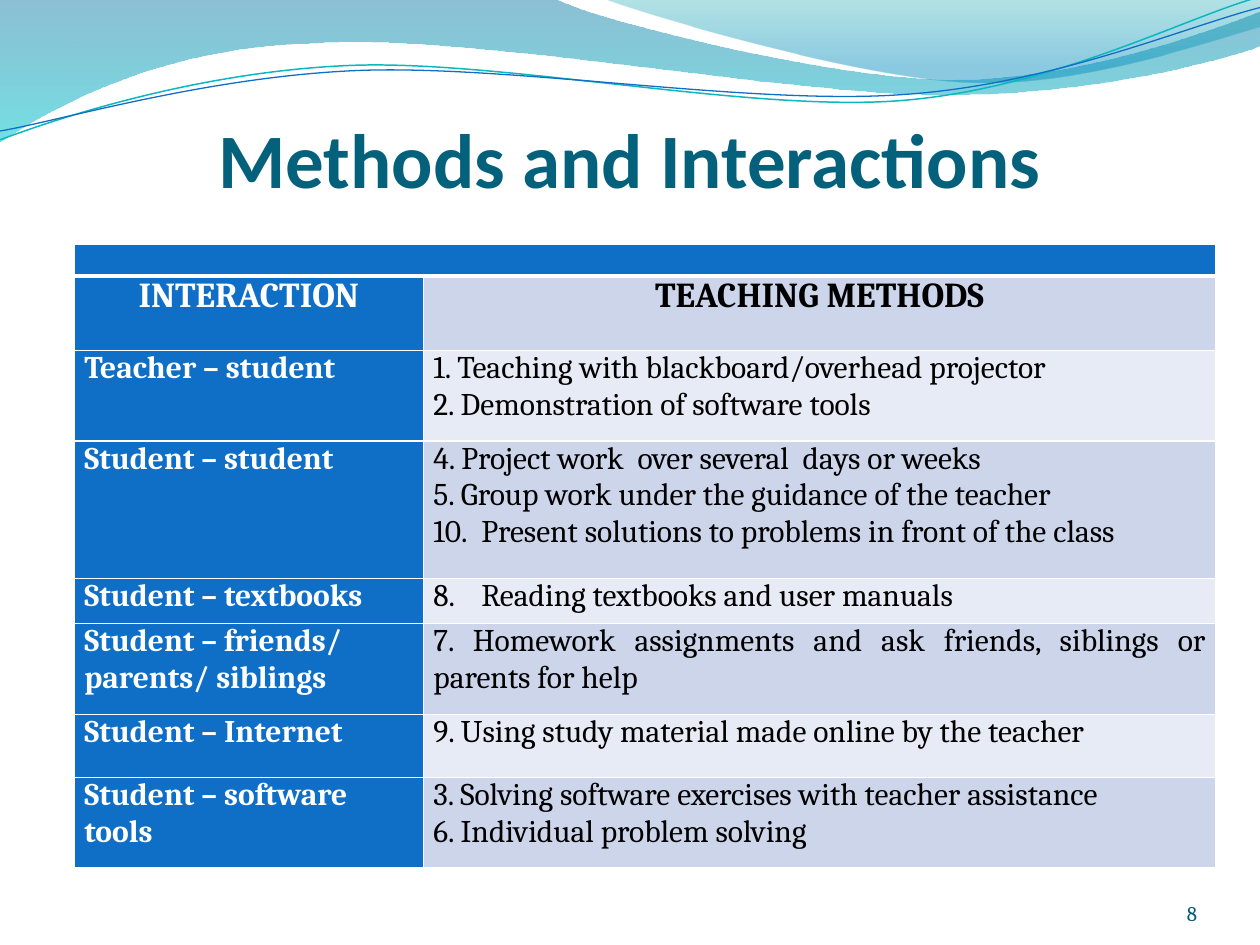
import math

import pptx
import pptx.dml.color
import pptx.enum.text
import pptx.oxml
import pptx.oxml.ns
import pptx.util
from lxml import etree

Inches = pptx.util.Inches
Pt = pptx.util.Pt
qn = pptx.oxml.ns.qn
ALIGN = pptx.enum.text.PP_ALIGN
ANCHOR = pptx.enum.text.MSO_ANCHOR

COLORS = {
    "title": "04617B", "number": "045D75", "head": "0F6FC6",
    "band_dark": "CCD5EA", "band_light": "E7EBF5", "white": "FFFFFF", "black": "000000",
    "wave_top": "0074A1", "wave_bottom": "00C6CF",
    "crest_top": "00A1A9", "crest_bottom": "008BBF",
    "teal_line": "0AB8BF", "blue_line": "0F6FC6",
}

LINE_TILT = -2.7

WAVE = [[(0, 0)], [(4.4, -0.01)],
        [(4.76, 0.17), (6.64, 0.63), (7.58, 0.63)], [(8.53, 0.63), (9.58, 0.26), (10, 0.09)],
        [(10.01, 0.36)],
        [(9.83, 0.44), (8.7, 0.76), (7.46, 0.75)], [(6.22, 0.75), (3.82, 0.28), (2.57, 0.34)],
        [(1.29, 0.36), (0.46, 0.83), (-0.01, 1.13)]]
CREST = [[(4.79, -0.01)],
         [(5.09, 0.11), (6.82, 0.62), (7.69, 0.65)], [(8.56, 0.69), (9.61, 0.32), (10, 0.21)],
         [(10, 0)]]
TEAL_LINE = [[(0, 1.11)],
             [(0.48, 0.93), (1.58, 0.57), (2.77, 0.52)], [(3.95, 0.47), (5.93, 0.89), (7.13, 0.8)],
             [(8.33, 0.71), (9.38, 0.15), (9.98, -0.02)]]
BLUE_LINE = [[(0, 1.04)],
             [(0.47, 0.96), (1.64, 0.61), (2.83, 0.56)], [(4.03, 0.51), (5.97, 0.84), (7.17, 0.75)],
             [(8.36, 0.67), (9.41, 0.21), (10, 0.06)]]

ROWS = [
    (0.72, "Teacher – student", [
        (None, "1. Teaching with blackboard/overhead projector"),
        (None, "2. Demonstration of software tools")]),
    (1.09, "Student – student", [
        (None, "4. Project work  over several  days or weeks"),
        (None, "5. Group work under the guidance of the teacher"),
        (10, "Present solutions to problems in front of the class")]),
    (0.36, "Student – textbooks", [(8, "Reading textbooks and user manuals")]),
    (0.72, "Student – friends/ parents/ siblings", [
        (None, "7. Homework assignments and ask friends, siblings or parents for help")]),
    (0.5, "Student – Internet", [(None, "9. Using study material made online by the teacher")]),
    (0.72, "Student – software tools", [
        (None, "3. Solving software exercises with teacher assistance"),
        (None, "6. Individual problem solving")]),
]


def rgb(name):
    return pptx.dml.color.RGBColor.from_string(COLORS[name])


def turn(point, center, degrees):
    x, y = point[0] - center[0], point[1] - center[1]
    cos, sin = math.cos(math.radians(degrees)), math.sin(math.radians(degrees))
    return center[0] + x * cos - y * sin, center[1] + x * sin + y * cos


def add_outline(page, box, outline, close):
    left, top = box[:2]
    outline = [[(left + Inches(x), top + Inches(y)) for x, y in part] for part in outline]
    builder = page.shapes.build_freeform(*outline[0][0])
    builder.add_line_segments([part[-1] for part in outline[1:]], close=close)
    shape = builder.convert_to_shape()
    shape.shadow.inherit = False
    segments = list(shape._element.iter(qn("a:lnTo")))
    for segment, part in zip(segments, outline[1:]):
        if len(part) == 3:
            segment.tag = qn("a:cubicBezTo")
            segment.remove(segment[0])
            for x, y in part:
                etree.SubElement(segment, qn("a:pt"),
                                 x=str(int(x - shape.left)), y=str(int(y - shape.top)))
    return shape


def add_wave(page, box, outline, stops):
    shape = add_outline(page, box, outline, True)
    shape.line.fill.background()
    shape.fill.gradient()
    shape.fill.gradient_angle = 270
    for stop, (color, position, _) in zip(shape.fill.gradient_stops, stops):
        stop.color.rgb = rgb(color)
        stop.position = position
    for tint, (_, _, opacity) in zip(shape._element.spPr.iter(qn("a:srgbClr")), stops):
        etree.SubElement(tint, qn("a:alpha"), val=str(opacity * 1000))


def add_wave_line(page, box, outline, color, width):
    center = (4.99, 0.58)
    level = [[turn(point, center, -LINE_TILT) for point in part] for part in outline]
    shape = add_outline(page, box, level, False)
    shape.rotation = LINE_TILT
    shape.fill.background()
    shape.line.color.rgb = rgb(color)
    shape.line.width = Pt(width)


def add_header_waves(page, box):
    add_wave(page, box, WAVE, [("wave_top", 0, 45), ("wave_bottom", 1, 55)])
    add_wave(page, box, CREST, [("crest_top", 0, 30), ("crest_bottom", 0.8, 45)])
    add_wave_line(page, box, TEAL_LINE, "teal_line", 0.85)
    add_wave_line(page, box, BLUE_LINE, "blue_line", 0.75)


def add_span(para, text, size, color, bold=False, font="Cambria"):
    span = para.add_run()
    span.text = text
    span.font.name = font
    span.font.size = Pt(size)
    span.font.bold = bold
    span.font.color.rgb = rgb(color)


def add_label(page, box, text, align, size, color, bold=False, font="Cambria", top=0):
    frame = page.shapes.add_textbox(*box).text_frame
    frame.word_wrap = True
    frame.vertical_anchor = ANCHOR.BOTTOM
    frame.margin_left = frame.margin_right = frame.margin_bottom = 0
    frame.margin_top = Inches(top)
    para = frame.paragraphs[0]
    para.alignment = align
    add_span(para, text, size, color, bold, font)


def style_cell(cell, fill, bottom=1):
    cell.margin_left = cell.margin_right = Inches(0.08)
    cell.margin_top = cell.margin_bottom = 0
    props = cell._tc.get_or_add_tcPr()
    for side, width in (("L", 1), ("R", 1), ("T", 1), ("B", bottom)):
        border = etree.SubElement(props, qn("a:ln" + side), w=str(Pt(width)))
        paint = etree.SubElement(border, qn("a:solidFill"))
        etree.SubElement(paint, qn("a:srgbClr"), val=COLORS["white"])
    cell.fill.solid()
    cell.fill.fore_color.rgb = rgb(fill)


def number_para(para, start):
    props = para._p.get_or_add_pPr()
    props.set("marL", str(Inches(0.38)))
    props.set("indent", str(-Inches(0.38)))
    etree.SubElement(props, qn("a:buFont"), typeface="Cambria")
    etree.SubElement(props, qn("a:buAutoNum"), type="arabicPeriod", startAt=str(start))


def fill_methods(cell, methods):
    frame = cell.text_frame
    for index, (start, text) in enumerate(methods):
        para = frame.add_paragraph() if index else frame.paragraphs[0]
        para.alignment = ALIGN.JUSTIFY
        if start:
            number_para(para, start)
        add_span(para, text, 18, "black")


def add_methods_table(page, box):
    table = page.shapes.add_table(len(ROWS) + 2, 2, *box).table
    table.columns[0].width = Inches(2.77)
    table.columns[1].width = box[2] - Inches(2.77)
    for row, height in zip(table.rows, [0.25, 0.59] + [entry[0] for entry in ROWS]):
        row.height = Inches(height)

    for cell in table.rows[0].cells:
        style_cell(cell, "head", 3)
        etree.SubElement(cell.text_frame.paragraphs[0]._p, qn("a:endParaRPr"), sz="1200")
    table.cell(0, 0).merge(table.cell(0, 1))

    headings = (("INTERACTION", "head", "white"), ("TEACHING METHODS", "band_dark", "black"))
    for column, (text, fill, color) in enumerate(headings):
        cell = table.cell(1, column)
        style_cell(cell, fill)
        para = cell.text_frame.paragraphs[0]
        para.alignment = ALIGN.CENTER
        add_span(para, text, 20, color, True)

    for index, (_, interaction, methods) in enumerate(ROWS):
        name_cell, methods_cell = table.rows[index + 2].cells
        style_cell(name_cell, "head")
        add_span(name_cell.text_frame.paragraphs[0], interaction, 18, "white", True)
        style_cell(methods_cell, "band_dark" if index % 2 else "band_light")
        fill_methods(methods_cell, methods)


def main():
    deck = pptx.Presentation()
    deck.slide_width, deck.slide_height = Inches(10), Inches(7.5)
    page = deck.slides.add_slide(deck.slide_layouts[6])
    add_header_waves(page, (0, 0, Inches(10), Inches(1.14)))
    add_label(page, (Inches(0.5), Inches(0.77), Inches(9), Inches(0.85)),
              "Methods and Interactions", ALIGN.CENTER, 44, "title", True, "Calibri", 0.05)
    add_label(page, (Inches(8.67), Inches(6.95), Inches(0.83), Inches(0.4)),
              "8", ALIGN.RIGHT, 12, "number")
    add_methods_table(page, (Inches(0.59), Inches(1.94), Inches(9.06), Inches(4.95)))
    deck.save("out.pptx")


if __name__ == "__main__":
    main()
